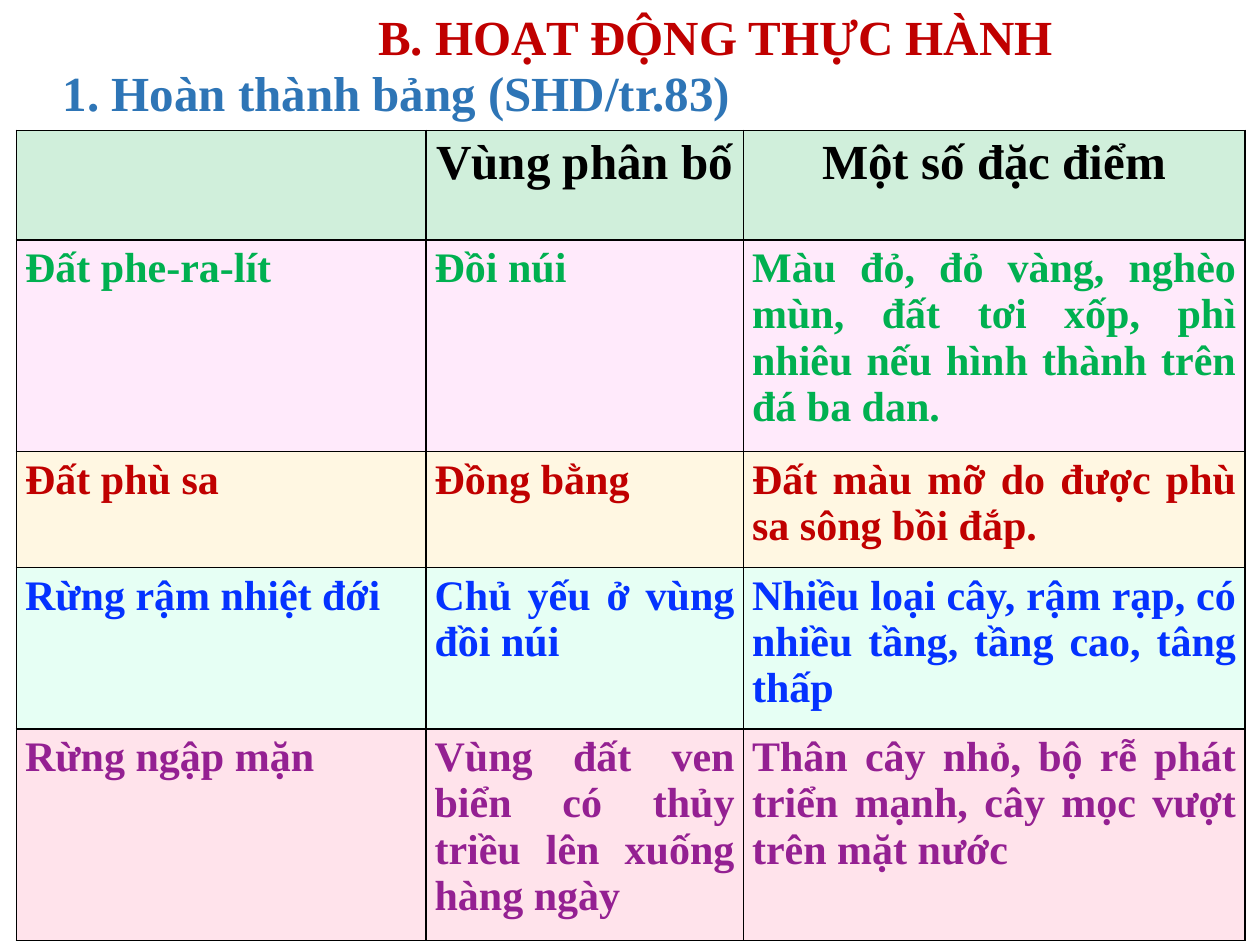
from lxml import etree
from pptx import Presentation
from pptx.dml.color import RGBColor
from pptx.enum.text import MSO_ANCHOR, MSO_AUTO_SIZE, PP_ALIGN
from pptx.oxml.ns import qn
from pptx.util import Inches, Pt

LEFT, CENTER, JUSTIFY = PP_ALIGN.LEFT, PP_ALIGN.CENTER, PP_ALIGN.JUSTIFY
TOP = MSO_ANCHOR.TOP
GROW = MSO_AUTO_SIZE.SHAPE_TO_FIT_TEXT
TITLE_ONLY = 5

COLUMNS = [3.25, 2.52, 3.98]
# Row height, fill, text colour, cell texts
ROWS = [
    (0.87, "D0EFDB", "000000", ["", "Vùng phân bố", "Một số đặc điểm"]),
    (1.67, "FFEAFB", "00B050", [
        "Đất phe-ra-lít", "Đồi núi",
        "Màu đỏ, đỏ vàng, nghèo mùn, đất tơi xốp, phì nhiêu nếu hình thành trên đá ba dan."]),
    (0.92, "FFF7E2", "C00000", [
        "Đất phù sa", "Đồng bằng", "Đất màu mỡ do được phù sa sông bồi đắp."]),
    (1.28, "E6FFF4", "0432FF", [
        "Rừng rậm nhiệt đới", "Chủ yếu ở vùng đồi núi",
        "Nhiều loại cây, rậm rạp, có nhiều tầng, tầng cao, tâng thấp"]),
    (1.67, "FFE3EB", "942092", [
        "Rừng ngập mặn", "Vùng đất ven biển có thủy triều lên xuống hàng ngày",
        "Thân cây nhỏ, bộ rễ phát triển mạnh, cây mọc vượt trên mặt nước"]),
]


def rgb(value):
    return RGBColor.from_string(value)


class SlideBuilder:
    font = "Times New Roman"
    heading_size = 28
    body_size = 24
    line_color = "000000"

    def __init__(self, prs):
        self.width, self.height = prs.slide_width, prs.slide_height
        self.slide = prs.slides.add_slide(prs.slide_layouts[TITLE_ONLY])

    def box(self, x, y, w, h):
        """Turn shares of the slide's size into lengths."""
        return (round(x * self.width), round(y * self.height),
                round(w * self.width), round(h * self.height))

    def set_text(self, tf, text, size, color, align):
        tf.text = text
        p = tf.paragraphs[0]
        p.alignment = align
        p.font.name, p.font.size, p.font.bold = self.font, Pt(size), True
        p.font.color.rgb = rgb(color)
        return p

    def heading(self, sp, text, color, wrap):
        tf = sp.text_frame
        self.set_text(tf, text, self.heading_size, color, LEFT)
        tf.vertical_anchor = TOP
        tf.word_wrap = wrap
        tf.auto_size = GROW

    def title(self, text, color, box):
        sp = self.slide.shapes.title
        sp.left, sp.top, sp.width, sp.height = self.box(*box)
        self.heading(sp, text, color, wrap=False)

    def subtitle(self, text, color, box):
        sp = self.slide.shapes.add_textbox(*self.box(*box))
        self.heading(sp, text, color, wrap=True)

    def borders(self, cell):
        tcPr = cell._tc.get_or_add_tcPr()
        for side in ("lnL", "lnR", "lnT", "lnB"):
            ln = etree.SubElement(tcPr, qn(f"a:{side}"), w=str(Pt(1)))
            fill = etree.SubElement(ln, qn("a:solidFill"))
            etree.SubElement(fill, qn("a:srgbClr"), val=self.line_color)

    def cell(self, cell, text, fill, color, is_header):
        cell.margin_left = cell.margin_right = Inches(0.07)
        cell.margin_top = cell.margin_bottom = Inches(0.04)
        self.borders(cell)
        cell.fill.solid()
        cell.fill.fore_color.rgb = rgb(fill)
        if text:
            size = self.heading_size if is_header else self.body_size
            align = CENTER if is_header else JUSTIFY
            p = self.set_text(cell.text_frame, text, size, color, align)
            p.space_after = Pt(8)

    def table(self, columns, rows, box):
        """Fill the box with a table; column and row sizes are relative."""
        x, y, w, h = self.box(*box)
        table = self.slide.shapes.add_table(len(rows), len(columns), x, y, w, h).table
        table.first_row = table.horz_banding = False
        for column, size in zip(table.columns, columns):
            column.width = round(w * size / sum(columns))
        total = sum(row[0] for row in rows)
        for i, (size, fill, color, texts) in enumerate(rows):
            table.rows[i].height = round(h * size / total)
            for j, text in enumerate(texts):
                self.cell(table.cell(i, j), text, fill, color, i == 0)


def main():
    prs = Presentation()
    prs.slide_width, prs.slide_height = Inches(10), Inches(7.5)
    s = SlideBuilder(prs)
    s.title("B. HOẠT ĐỘNG THỰC HÀNH", "C00000", (0.29, 0, 0.56, 0.08))
    s.subtitle("1. Hoàn thành bảng (SHD/tr.83)", "2E75B6", (0.04, 0.06, 0.56, 0.08))
    s.table(COLUMNS, ROWS, (0.013, 0.138, 0.975, 0.855))
    prs.save("out.pptx")


if __name__ == "__main__":
    main()
